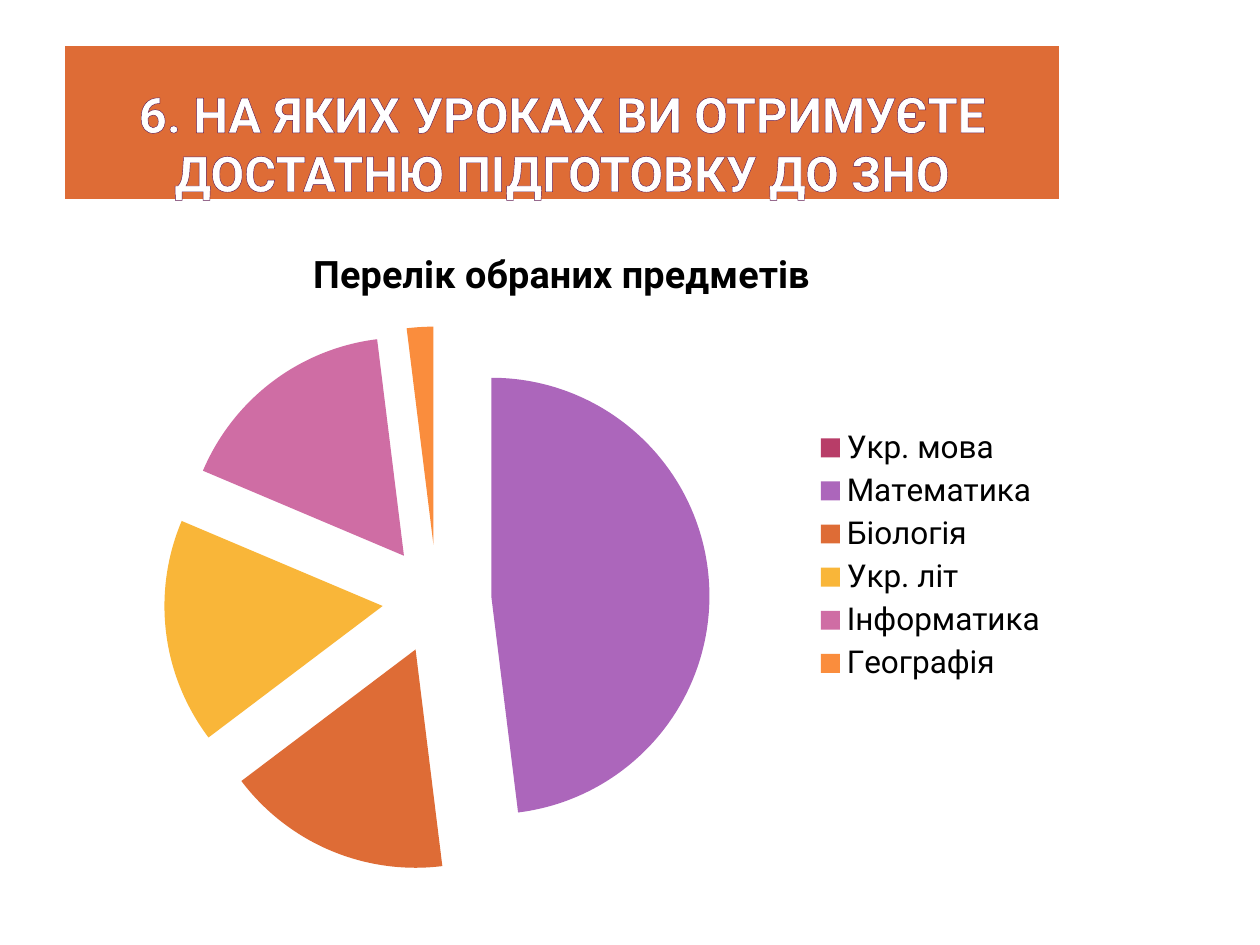
from lxml import etree
from pptx import Presentation
from pptx import util as u
from pptx.chart import data
from pptx.dml import color
from pptx.enum import chart as ch, shapes, text
from pptx.oxml import ns

FONT = "Roboto"
HEAD = "6. НА ЯКИХ УРОКАХ ВИ ОТРИМУЄТЕ ДОСТАТНЮ ПІДГОТОВКУ ДО ЗНО"
NAME = "Перелік обраних предметів"
ITEMS = [
    ("Укр. мова", 0, "B83D68"),
    ("Математика", 49, "AC66BB"),
    ("Біологія", 17, "DE6C36"),
    ("Укр. літ", 17, "F9B639"),
    ("Інформатика", 17, "CF6DA4"),
    ("Географія", 2, "FA8D3D"),
]


def paint(fmt, hue):
    fmt.solid()
    fmt.fore_color.rgb = color.RGBColor.from_string(hue)


def style(font, size, hue="000000", bold=False):
    font.name, font.size, font.bold = FONT, u.Pt(size), bold
    paint(font.fill, hue)


def write(frame, words, size, hue="000000", bold=False, align=text.PP_ALIGN.CENTER):
    par = frame.paragraphs[0]
    par.alignment = align
    run = par.add_run()
    run.text = words
    style(run.font, size, hue, bold)
    return run


def outline(run, hue, width):
    """Draw a thin line round the letters."""
    line = etree.Element(ns.qn("a:ln"), w=str(u.Pt(width)))
    fill = etree.SubElement(line, ns.qn("a:solidFill"))
    etree.SubElement(fill, ns.qn("a:srgbClr"), val=hue)
    run.font._element.insert(0, line)


def banner(slide, x, y, w, h):
    box = slide.shapes.add_shape(shapes.MSO_SHAPE.RECTANGLE, x, y, w, h)
    box.shadow.inherit = False
    paint(box.fill, "DE6C36")
    paint(box.line.fill, "FFFFFF")
    box.line.width = u.Pt(2.5)
    frame = box.text_frame
    frame.word_wrap = True
    frame.vertical_anchor = text.MSO_ANCHOR.BOTTOM
    frame.margin_left = frame.margin_right = u.Inches(0.05)
    frame.margin_top = frame.margin_bottom = 0
    outline(write(frame, HEAD, 28, hue="FFFFFF", bold=True), "5E1A50", 0.04)


def burst(plot, amount):
    """Pull every slice out from the centre."""
    for point in plot.series[0]._element.findall(ns.qn("c:dPt")):
        pull = etree.Element(ns.qn("c:explosion"), val=str(amount))
        point.find(ns.qn("c:spPr")).addprevious(pull)


def pie(slide, x, y, w, h):
    table = data.CategoryChartData()
    table.categories = [item[0] for item in ITEMS]
    table.add_series(NAME, [item[1] for item in ITEMS])
    chart = slide.shapes.add_chart(ch.XL_CHART_TYPE.PIE, x, y, w, h, table).chart
    style(chart.font, 18)
    chart.has_title = True
    write(chart.chart_title.text_frame, NAME, 21.6, bold=True)
    chart.chart_title.include_in_layout = False
    chart.has_legend = True
    chart.legend.position = ch.XL_LEGEND_POSITION.RIGHT
    chart.legend.include_in_layout = False
    style(chart.legend.font, 18)
    plot = chart.plots[0]
    plot.vary_by_categories = True
    for i, (_, _, hue) in enumerate(ITEMS):
        paint(plot.series[0].points[i].format.fill, hue)
    burst(plot, 25)


def main():
    deck = Presentation()
    deck.slide_width, deck.slide_height = u.Inches(10), u.Inches(7.5)
    slide = deck.slides.add_slide(deck.slide_layouts[6])
    left, width = u.Inches(0.5), u.Inches(7.92)
    banner(slide, left, u.Inches(0.35), width, u.Inches(1.25))
    pie(slide, left, u.Inches(1.76), width, u.Inches(5.3))
    deck.save("out.pptx")


if __name__ == "__main__":
    main()
